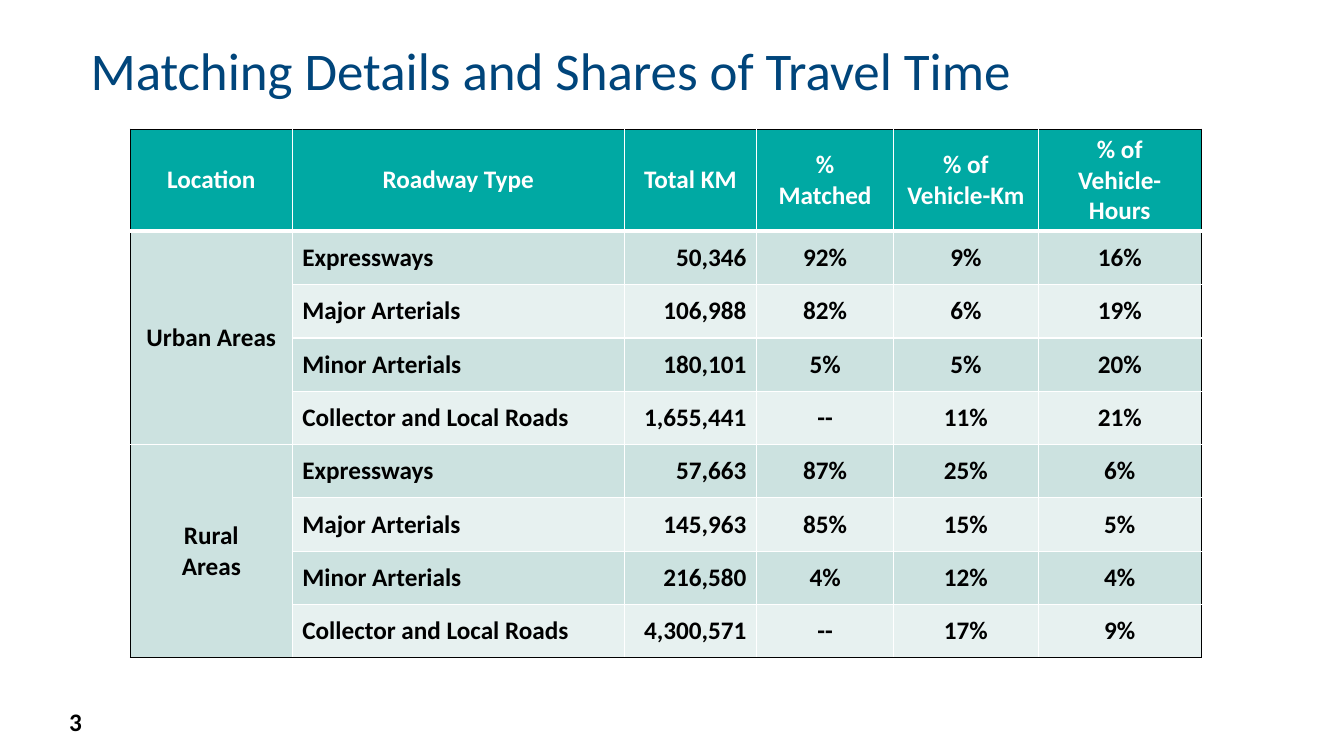
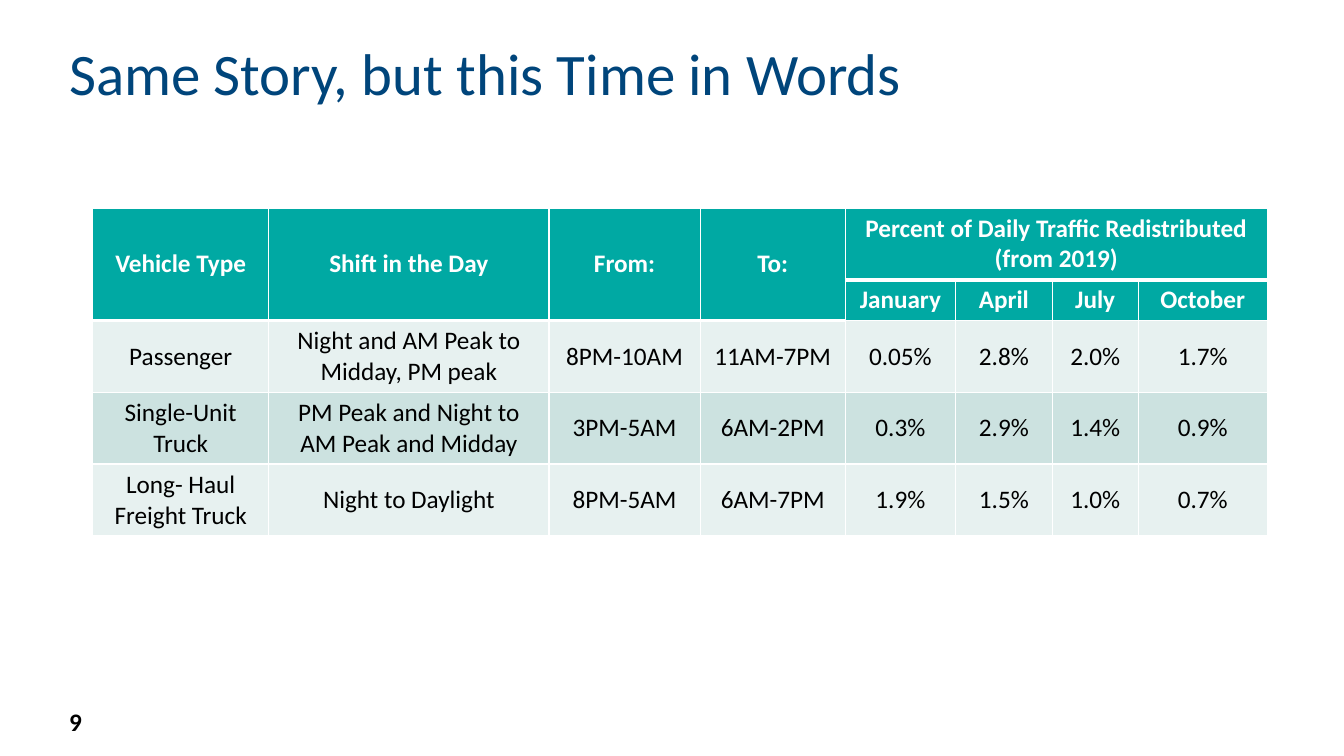
from itertools import product

from lxml import etree
from pptx import Presentation
from pptx.dml.color import RGBColor
from pptx.enum.text import MSO_ANCHOR, PP_ALIGN
from pptx.oxml.ns import qn
from pptx.util import Inches, Pt

MIDDLE, TOP = MSO_ANCHOR.MIDDLE, MSO_ANCHOR.TOP
ALIGN = {"l": PP_ALIGN.LEFT, "c": PP_ALIGN.CENTER, "r": PP_ALIGN.RIGHT}
HEX = {"navy": "00457B", "teal": "00A9A3", "mint": "CCE2E0",
       "pale": "E7F1F0", "white": "FFFFFF", "black": "000000"}
FONT, SIZE = "Calibri", 18
THIN, THICK = 1, 3


class Deck:
    """Holds the style and the current slide; lengths are percent of the slide."""

    def __init__(self):
        self.prs = Presentation()
        self.prs.slide_width, self.prs.slide_height = Inches(13.33), Inches(7.5)

    def wide(self, share):
        return round(self.prs.slide_width * share / 100)

    def high(self, share):
        return round(self.prs.slide_height * share / 100)

    def box(self, left, top, width, height):
        return self.wide(left), self.high(top), self.wide(width), self.high(height)

    def style(self, para, color, size=SIZE, bold=False):
        font = para.font
        font.name, font.size, font.bold = FONT, Pt(size), bold
        font.color.rgb = RGBColor.from_string(HEX[color])

    def text(self, words, area, color, size, bold=False, anchor=TOP):
        frame = self.slide.shapes.add_textbox(*self.box(*area)).text_frame
        frame.word_wrap, frame.vertical_anchor = True, anchor
        frame.text = words
        para = frame.paragraphs[0]
        self.style(para, color, size, bold)
        return para

    def page(self, number, title, area, size):
        """Start a slide with its title and page number."""
        self.slide = self.prs.slides.add_slide(self.prs.slide_layouts[6])
        self.text(str(number), (4.4, 91.6, 22.5, 7.6), "black", SIZE, True, MIDDLE)
        self.text(title, area, "navy", size).line_spacing = 0.9

    def edge(self, cell, side, color, width):
        line = etree.SubElement(cell._tc.get_or_add_tcPr(), qn("a:ln" + side),
                                w=str(Pt(width)))
        fill = etree.SubElement(line, qn("a:solidFill"))
        etree.SubElement(fill, qn("a:srgbClr"), val=HEX[color])

    def cell(self, cell, words, fill, color, bold, align):
        cell.fill.solid()
        cell.fill.fore_color.rgb = RGBColor.from_string(HEX[fill])
        cell.vertical_anchor = MIDDLE
        cell.text = words
        for para in cell.text_frame.paragraphs:
            para.alignment = ALIGN[align]
            self.style(para, color, SIZE, bold)

    def table(self, left, top, cols, rows, data, spans, aligns,
              heads=1, bold=False, frame="white"):
        """Draw a table; None in data marks a cell covered by a span."""
        area = self.box(left, top, sum(cols), sum(rows))
        grid = self.slide.shapes.add_table(len(rows), len(cols), *area).table
        grid.first_row = grid.horz_banding = False
        for col, share in zip(grid.columns, cols):
            col.width = self.wide(share)
        for row, share in zip(grid.rows, rows):
            row.height = self.high(share)
        for r, c in product(range(len(rows)), range(len(cols))):
            if data[r][c] is None:
                continue
            tall, broad = spans.get((r, c), (1, 1))
            low, right = r + tall, c + broad
            outer = {"L": c == 0, "R": right == len(cols),
                     "T": r == 0, "B": low == len(rows)}
            for y, x in product(range(r, low), range(c, right)):
                for side, rim in outer.items():
                    width = THICK if side == "B" and r == 0 else THIN
                    self.edge(grid.cell(y, x), side, frame if rim else "white", width)
            cell = grid.cell(r, c)
            if (r, c) in spans:
                cell.merge(grid.cell(low - 1, right - 1))
            if r < heads:
                self.cell(cell, data[r][c], "teal", "white", True, "c")
            else:
                band = "mint" if r % 2 else "pale"
                self.cell(cell, data[r][c], band, "black", bold, aligns[c])


ROADS = [
    ["Location", "Roadway Type", "Total KM", "% Matched",
     "% of\nVehicle-Km", "% of\nVehicle-Hours"],
    ["Urban Areas", "Expressways", "50,346", "92%", "9%", "16%"],
    [None, "Major Arterials", "106,988", "82%", "6%", "19%"],
    [None, "Minor Arterials", "180,101", "5%", "5%", "20%"],
    [None, "Collector and Local Roads", "1,655,441", "--", "11%", "21%"],
    ["Rural\nAreas", "Expressways", "57,663", "87%", "25%", "6%"],
    [None, "Major Arterials", "145,963", "85%", "15%", "5%"],
    [None, "Minor Arterials", "216,580", "4%", "12%", "4%"],
    [None, "Collector and Local Roads", "4,300,571", "--", "17%", "9%"],
]
SHIFTS = [
    ["Vehicle Type", "Shift in the Day", "From:", "To:",
     "Percent of Daily Traffic Redistributed (from 2019)", None, None, None],
    [None, None, None, None, "January", "April", "July", "October"],
    ["Passenger", "Night and AM Peak to Midday, PM peak",
     "8PM-10AM", "11AM-7PM", "0.05%", "2.8%", "2.0%", "1.7%"],
    ["Single-Unit Truck", "PM Peak and Night to AM Peak and Midday",
     "3PM-5AM", "6AM-2PM", "0.3%", "2.9%", "1.4%", "0.9%"],
    ["Long- Haul Freight Truck", "Night to Daylight",
     "8PM-5AM", "6AM-7PM", "1.9%", "1.5%", "1.0%", "0.7%"],
]


def main():
    deck = Deck()
    deck.page(3, "Matching Details and Shares of Travel Time",
              (6, 5.3, 87.15, 9.3), 37.8)
    deck.table(9.7, 17.1, [12.05, 24.7, 9.85, 10.2, 10.75, 12.15],
               [13.5] + [7.05] * 8, ROADS, {(1, 0): (4, 1), (5, 0): (4, 1)},
               "clrccc", bold=True, frame="black")

    deck.page(9, "Same Story, but this Time in Words", (4.4, 5.3, 91.05, 14), 42)
    spans = {(0, c): (2, 1) for c in range(4)}
    spans[0, 4] = (1, 4)
    deck.table(6.9, 27.5, [13.1, 20.85, 11.25, 10.8, 8.2, 7.2, 6.4, 9.6],
               [9.5, 5.4] + [9.5] * 3, SHIFTS, spans, "c" * 8, heads=2)
    deck.prs.save("out.pptx")


if __name__ == "__main__":
    main()
